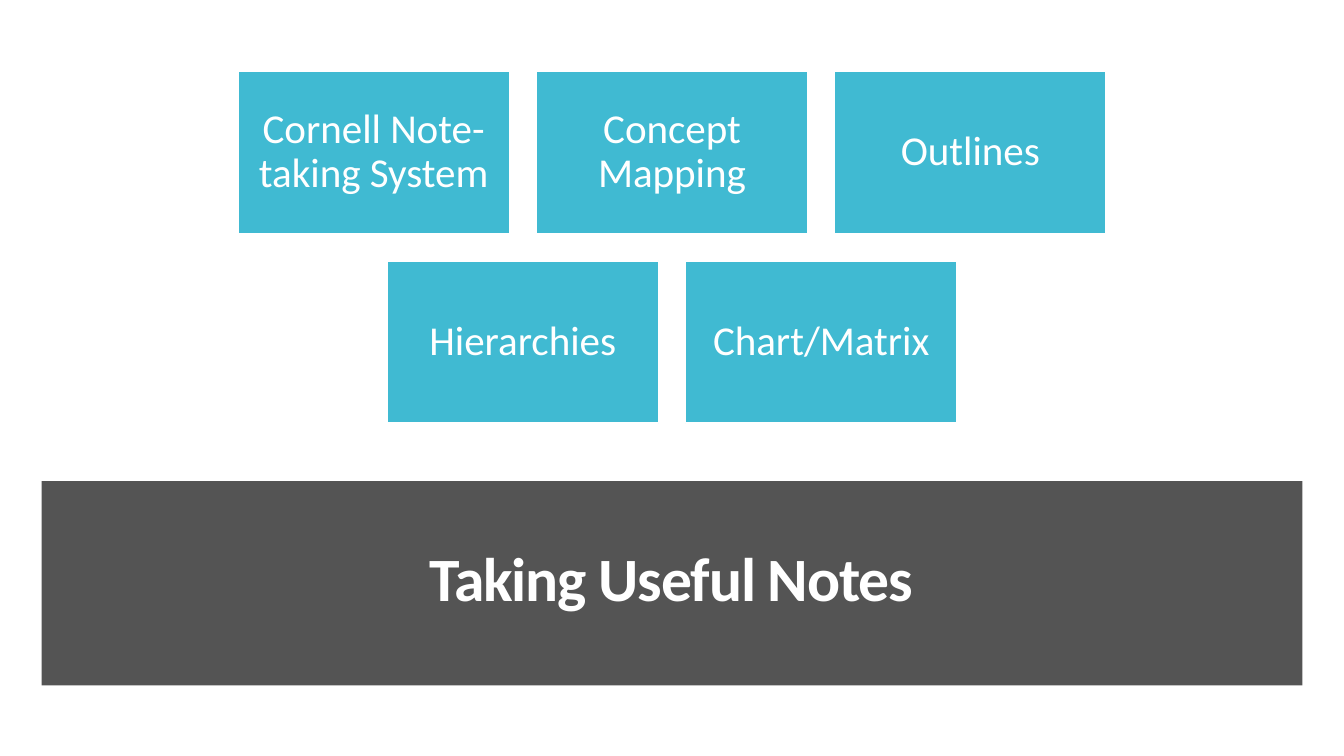
from pptx import Presentation
from pptx import util as u
from pptx.dml.color import RGBColor
from pptx.enum import shapes, text

TEAL = RGBColor(0x40, 0xBA, 0xD2)
GREY = RGBColor(0x54, 0x54, 0x54)
WHITE = RGBColor(0xFF, 0xFF, 0xFF)

PAGE_WIDTH = 10
PAGE_HEIGHT = PAGE_WIDTH * 9 / 16
CARD_WIDTH, CARD_HEIGHT = 2.02, 1.21
GAP = 0.2
CARDS_TOP = 0.53
CARD_ROWS = [
    ["Cornell Note-taking System", "Concept Mapping", "Outlines"],
    ["Hierarchies", "Chart/Matrix"],
]
CARD_FONT = {"name": "Calibri", "size": u.Pt(22)}
TITLE_FONT = {"name": "Calibri", "size": u.Pt(33), "bold": True}


def set_all(target, values):
    for name, value in values.items():
        setattr(target, name, value)


def write(box, words, font, inset):
    """Put one centred white paragraph in a box."""
    frame = box.text_frame
    margins = ("margin_left", "margin_top", "margin_right", "margin_bottom")
    set_all(frame, dict.fromkeys(margins, u.Inches(inset)))
    set_all(frame, {"word_wrap": True,
                    "vertical_anchor": text.MSO_ANCHOR.MIDDLE})
    para = frame.paragraphs[0]
    set_all(para, {"alignment": text.PP_ALIGN.CENTER, "line_spacing": 0.9})
    span = para.add_run()
    span.text = words
    set_all(span.font, font)
    span.font.color.rgb = WHITE
    return span


def add_block(page, left, top, width, height, fill):
    block = page.shapes.add_shape(
        shapes.MSO_SHAPE.RECTANGLE,
        *map(u.Inches, (left, top, width, height)))
    block.shadow.inherit = False
    block.fill.solid()
    block.fill.fore_color.rgb = fill
    block.line.fill.background()
    return block


def add_card(page, left, top, words):
    card = add_block(page, left, top, CARD_WIDTH, CARD_HEIGHT, TEAL)
    card.line.color.rgb = WHITE
    card.line.width = u.Pt(0.85)
    write(card, words, CARD_FONT, 0.09)


def add_card_rows(page):
    """Centre each row of cards on the page."""
    for row, labels in enumerate(CARD_ROWS):
        row_width = len(labels) * (CARD_WIDTH + GAP) - GAP
        left = (PAGE_WIDTH - row_width) / 2
        top = CARDS_TOP + row * (CARD_HEIGHT + GAP)
        for column, words in enumerate(labels):
            add_card(page, left + column * (CARD_WIDTH + GAP), top, words)


def add_title(page, words):
    box = page.shapes.add_textbox(
        *map(u.Inches, (0.45, 3.77, 9.09, 1.11)))
    span = write(box, words, TITLE_FONT, 0.05)
    # Tighter letter spacing, in hundredths of a point
    span._r.get_or_add_rPr().set("spc", "-60")


def main():
    deck = Presentation()
    deck.slide_width = u.Inches(PAGE_WIDTH)
    deck.slide_height = u.Inches(PAGE_HEIGHT)
    page = deck.slides.add_slide(deck.slide_layouts[6])

    # Title band
    add_block(page, 0.31, 3.58, 9.38, 1.52, GREY)
    add_title(page, "Taking Useful Notes")

    # Note-taking methods
    add_card_rows(page)

    deck.save("out.pptx")


if __name__ == "__main__":
    main()
